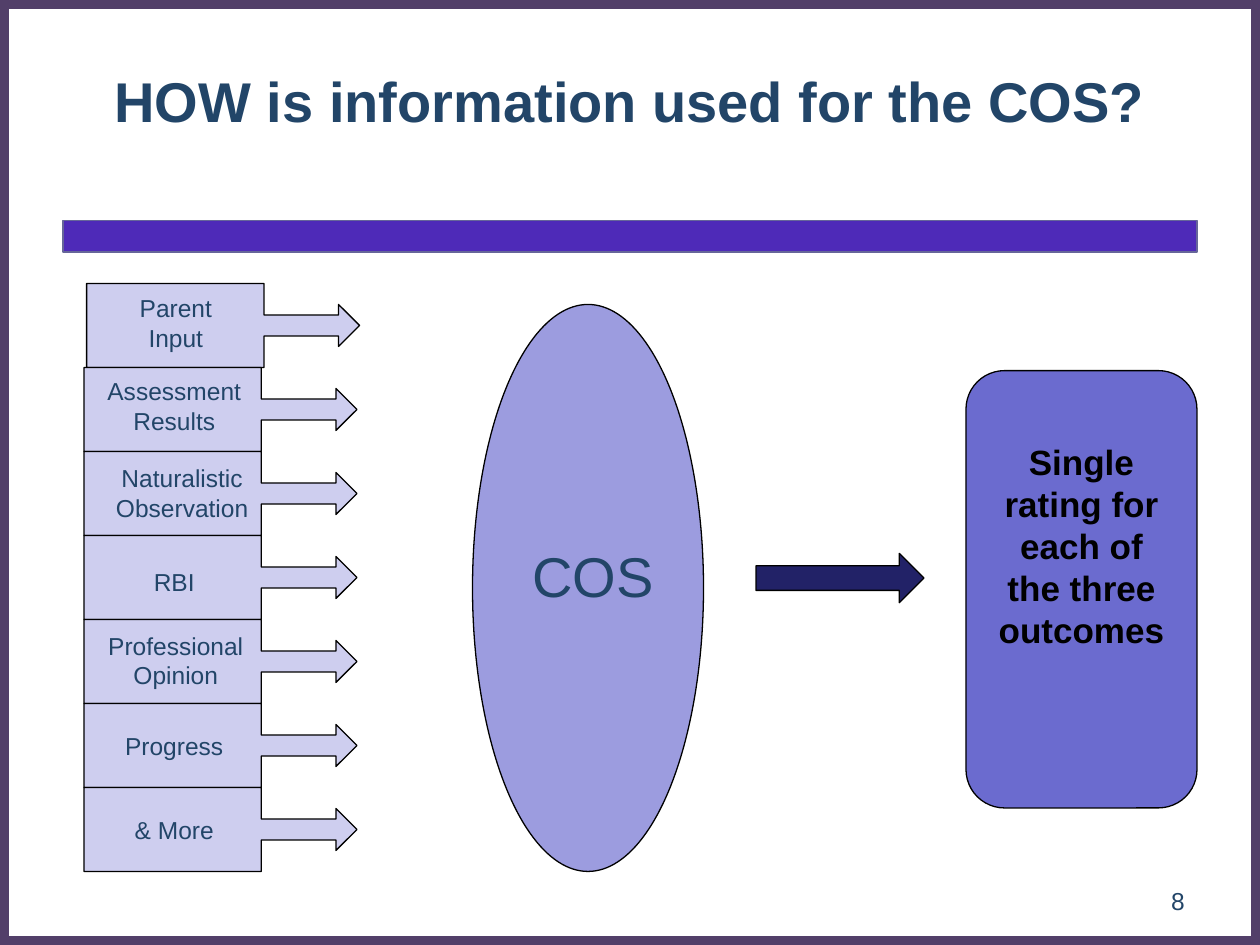
from typing import NamedTuple

from pptx import Presentation
from pptx.dml.color import RGBColor
from pptx.enum.shapes import MSO_SHAPE
from pptx.enum.text import MSO_ANCHOR, PP_ALIGN
from pptx.util import Inches, Pt

COLUMNS, ROWS = 120, 90
WIDTH, HEIGHT = Inches(10), Inches(7.5)
FONT = "Arial"
COLORS = {
    "paper": "FFFFFF", "frame": "523F69", "bar": "4E2AB8", "bar_edge": "666699",
    "ink": "224568", "black": "000000", "source": "CECEEF", "process": "9C9CDF",
    "arrow": "222267", "result": "6B6BCF",
}
SOURCES = [
    ("Parent Input", 0.25, (2, 0.35, 13, 6.85)),
    ("Assessment Results", 0, (0.4, 0.25, 16.4, 6.85)),
    ("Naturalistic Observation", 0, (0.4, 0.55, 17.9, 6.85)),
    ("RBI", 0, (2.1, 2.4, 13, 4.1)),
    ("Professional Opinion", 0, (0.64, 0.5, 16.2, 6.85)),
    ("Progress", 0, (2.1, 2, 13, 4.1)),
    ("& More", 0, (2.1, 2, 13, 4.1)),
]


class Box(NamedTuple):
    """A rectangle in grid columns and rows."""
    left: float
    top: float
    width: float
    height: float

    def inner(self, left, top, width, height):
        """Return a box placed relative to this one."""
        return Box(self.left + left, self.top + top, width, height)

    def lengths(self):
        """Return the rectangle in slide units."""
        column, row = WIDTH / COLUMNS, HEIGHT / ROWS
        return (int(self.left * column), int(self.top * row),
                int(self.width * column), int(self.height * row))


def color(name):
    """Return a named colour."""
    return RGBColor.from_string(COLORS[name])


def add_figure(page, kind, box, fill=None, line="black", weight=0.75):
    """Draw a preset shape."""
    shape = page.shapes.add_shape(kind, *box.lengths())
    shape.shadow.inherit = False
    if fill:
        shape.fill.solid()
        shape.fill.fore_color.rgb = color(fill)
    else:
        shape.fill.background()
    shape.line.color.rgb = color(line)
    shape.line.width = Pt(weight)


def write(frame, text, size, ink="ink", bold=False,
          align=PP_ALIGN.CENTER, anchor=MSO_ANCHOR.TOP):
    """Fill a text frame with one styled run."""
    frame.word_wrap = True
    frame.vertical_anchor = anchor
    para = frame.paragraphs[0]
    para.alignment = align
    span = para.add_run()
    span.text = text
    span.font.name = FONT
    span.font.size = Pt(size)
    span.font.bold = bold
    span.font.color.rgb = color(ink)


def add_label(page, box, text, size, **style):
    """Add a text box."""
    write(page.shapes.add_textbox(*box.lengths()).text_frame, text, size, **style)


def add_frame(page, box):
    """Draw the page border, the bar and the page number."""
    add_figure(page, MSO_SHAPE.RECTANGLE, box, line="frame", weight=10)
    add_figure(page, MSO_SHAPE.RECTANGLE, box.inner(6, 21, 108, 3), "bar", "bar_edge")
    add_label(page, box.inner(86, 83.4, 28, 4.8), "8", 14,
              align=PP_ALIGN.RIGHT, anchor=MSO_ANCHOR.MIDDLE)


def add_title(page, box):
    """Place and format the title placeholder."""
    title = page.shapes.title
    title.left, title.top, title.width, title.height = box.lengths()
    write(title.text_frame, "HOW is information used for the COS?", 32,
          bold=True, anchor=MSO_ANCHOR.MIDDLE)


def add_sources(page, box):
    """Stack the arrow callouts and their labels."""
    step = box.height / len(SOURCES)
    callouts = [box.inner(shift, index * step, box.width, step)
                for index, (_, shift, _) in enumerate(SOURCES)]
    for callout in callouts:
        add_figure(page, MSO_SHAPE.RIGHT_ARROW_CALLOUT, callout, "source")
    for callout, (text, _, place) in zip(callouts, SOURCES):
        add_label(page, callout.inner(*place), text, 14)


def add_process(page, box):
    """Draw the ellipse in the middle."""
    add_figure(page, MSO_SHAPE.OVAL, box, "process")
    add_label(page, box.inner(3, 22, 17, 7.7), "COS", 32)


def add_result(page, box):
    """Draw the arrow and the rating panel."""
    add_figure(page, MSO_SHAPE.RIGHT_ARROW, box.inner(0, 17.4, 16, 4.7), "arrow")
    add_figure(page, MSO_SHAPE.ROUNDED_RECTANGLE,
               box.inner(20, 0, 22, box.height), "result")
    add_label(page, box.inner(21.5, 6.1, 19, 21.4),
              "Single rating for each of the three outcomes", 20,
              ink="black", bold=True)


def main():
    """Build the slide and save it."""
    deck = Presentation()
    deck.slide_width, deck.slide_height = WIDTH, HEIGHT
    page = deck.slides.add_slide(deck.slide_layouts[5])
    page.background.fill.solid()
    page.background.fill.fore_color.rgb = color("paper")
    add_frame(page, Box(0, 0, COLUMNS, ROWS))
    add_title(page, Box(7, 2, 106, 15))
    add_sources(page, Box(8, 27, 26, 56))
    add_process(page, Box(45, 29, 22, 54))
    add_result(page, Box(72, 35.3, 42, 41.65))
    deck.save("out.pptx")


if __name__ == "__main__":
    main()
